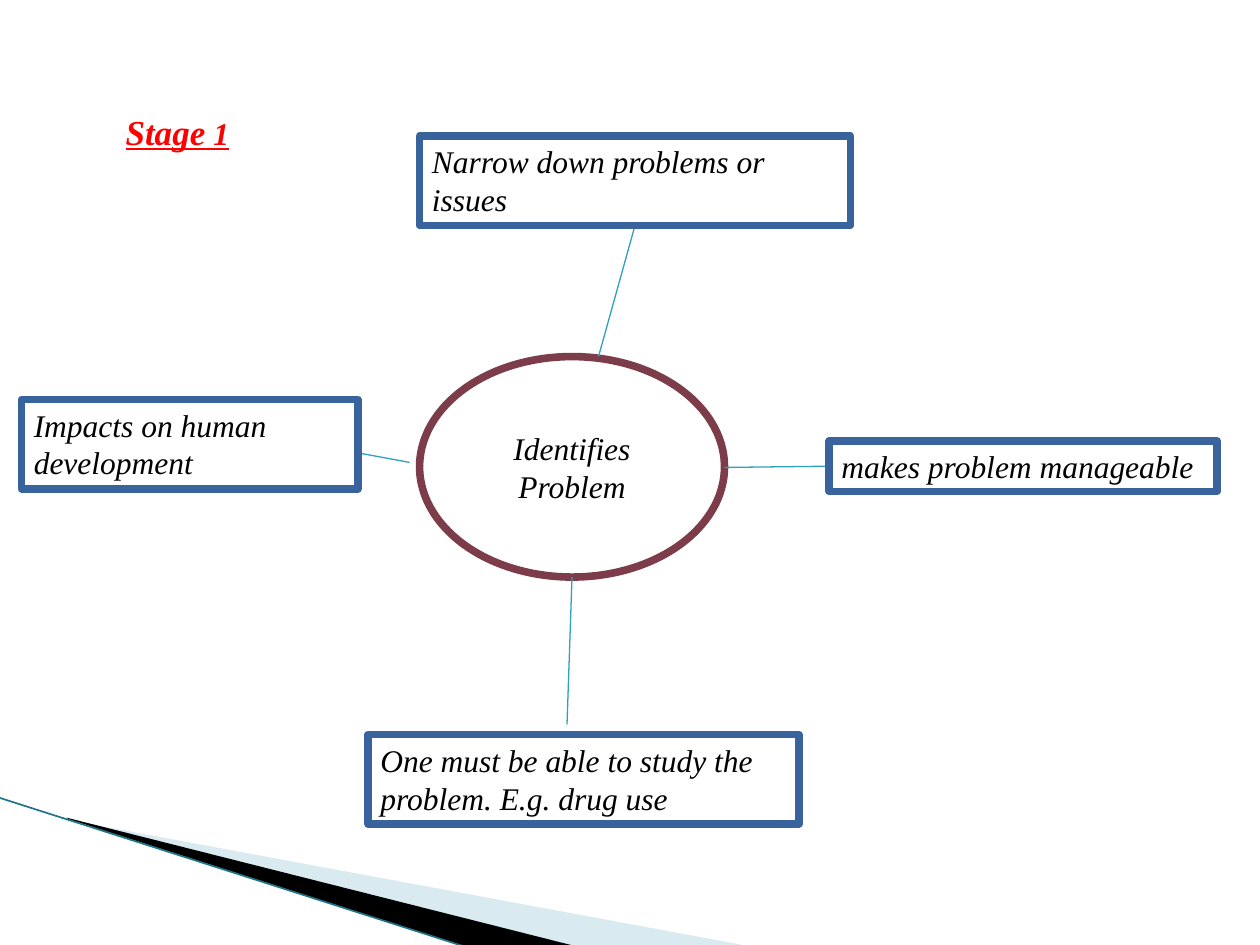
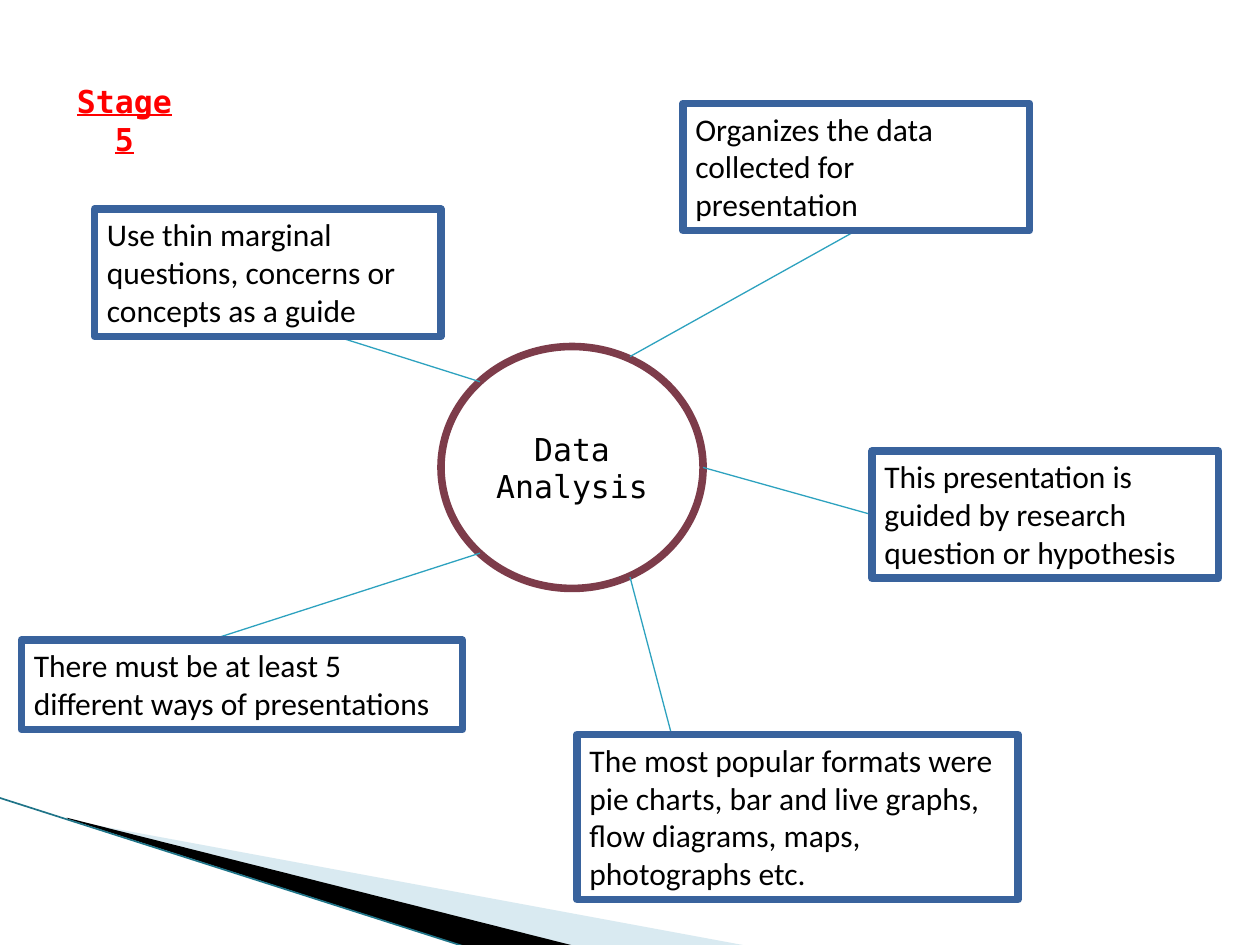
"""Builds two research-stage slides, each a hub with callout boxes around it."""
from dataclasses import dataclass

import lxml.etree
import pptx
import pptx.dml.color
import pptx.enum.shapes
import pptx.enum.text
import pptx.oxml.ns
import pptx.util


@dataclass(frozen=True)
class Theme:
    white: str = "FFFFFF"
    black: str = "000000"
    red: str = "FF0000"
    box_line: str = "39639D"
    hub_line: str = "7D3C4A"
    link: str = "2DA2BF"
    pale_band: str = "A0CBDC"
    band_edge: str = "1F7488"
    body_size: int = 18
    title_size: int = 20
    frame_width: float = 4.33
    link_width: float = 0.75
    edge_width: float = 0.95


THEME = Theme()
PX = 9144
KIND = pptx.enum.shapes.MSO_SHAPE
STRAIGHT = pptx.enum.shapes.MSO_CONNECTOR.STRAIGHT
CENTER = pptx.enum.text.PP_ALIGN.CENTER
LEFT = pptx.enum.text.PP_ALIGN.LEFT
MIDDLE = pptx.enum.text.MSO_ANCHOR.MIDDLE
TOP = pptx.enum.text.MSO_ANCHOR.TOP
rgb = pptx.dml.color.RGBColor.from_string
qn = pptx.oxml.ns.qn

BANDS = [
    ([(55, 651), (595, 751), (456, 751), (55, 650)], THEME.pale_band, 40),
    ([(53, 649), (457, 751), (372, 752), (54, 650)], THEME.black, 100),
]

STAGES = [
    {
        "title": [("Stage", THEME.title_size), (" 1", THEME.body_size)],
        "title_at": (42, 42, 200, 133),
        "title_fill": THEME.white,
        "title_font": "Times New Roman",
        "body_font": "Times New Roman",
        "italic": True,
        "hub": ("Identifies Problem", KIND.OVAL, (333, 283, 242, 175)),
        "callouts": [
            ("One must be able to study the problem. E.g. drug use",
             (292, 583, 342, 71), (454, 458), (450, 575)),
            ("makes problem manageable", (658, 350, 308, 40), (575, 371), 1),
            ("Narrow down problems or issues", (333, 108, 342, 71), (475, 283), 2),
            ("Impacts on human development",
             (17, 317, 267, 71), (325, 367), (233, 350)),
        ],
    },
    {
        "title": [("Stage 5", THEME.body_size)],
        "title_at": (0, 33, 200, 133),
        "title_fill": None,
        "title_font": "DejaVu Sans Mono",
        "body_font": "Calibri",
        "italic": False,
        "hub": ("Data Analysis", KIND.FLOWCHART_CONNECTOR, (350, 275, 208, 192)),
        "callouts": [
            ("Organizes the data collected for presentation",
             (542, 82, 275, 101), (500, 283), 2),
            ("Use thin marginal questions, concerns or concepts as a guide",
             (75, 166, 275, 101), (381, 303), (267, 267)),
            ("This presentation is guided by research question or hypothesis",
             (692, 358, 275, 101), (558, 371), 1),
            ("There must be at least 5 different ways of presentations",
             (17, 508, 350, 71), (381, 439), (167, 508)),
            ("The most popular formats were pie charts, bar and live graphs, "
             "flow diagrams, maps, photographs etc.",
             (458, 583, 350, 131), (500, 458), (533, 583)),
        ],
    },
]


def add_box(page, kind, place, spans, font, color, align, fill, line):
    """Adds a shape holding one paragraph of (text, size) spans."""
    box = page.shapes.add_shape(kind, *[length * PX for length in place])
    box.shadow.inherit = False
    if fill:
        box.fill.solid()
        box.fill.fore_color.rgb = rgb(fill)
    else:
        box.fill.background()
    if line:
        box.line.color.rgb = rgb(line)
        box.line.width = pptx.util.Pt(THEME.frame_width)
    else:
        box.line.fill.background()
    frame = box.text_frame
    frame.word_wrap = True
    frame.vertical_anchor = MIDDLE if align == CENTER else TOP
    para = frame.paragraphs[0]
    para.alignment = align
    for text, size in spans:
        span = para.add_run()
        span.text = text
        span.font.name = font
        span.font.size = pptx.util.Pt(size)
        span.font.color.rgb = rgb(color)
    return box


def add_line(page, start, end, color, width):
    """Adds a straight connector without a shadow."""
    points = [length * PX for length in (*start, *end)]
    line = page.shapes.add_connector(STRAIGHT, *points)
    line.line.color.rgb = rgb(color)
    line.line.width = pptx.util.Pt(width)
    lxml.etree.SubElement(line.element.spPr, qn("a:effectLst"))
    return line


deck = pptx.Presentation()
deck.slide_width = 1000 * PX
deck.slide_height = 750 * PX

for stage in STAGES:
    page = deck.slides.add_slide(deck.slide_layouts[6])
    page.background.fill.solid()
    page.background.fill.fore_color.rgb = rgb(THEME.white)

    for corners, color, opacity in BANDS:
        outline = page.shapes.build_freeform(*corners[0], scale=PX)
        outline.add_line_segments(corners[1:], close=True)
        band = outline.convert_to_shape()
        band.shadow.inherit = False
        band.fill.solid()
        band.fill.fore_color.rgb = rgb(color)
        band.line.fill.background()
        if opacity < 100:
            tint = band.element.spPr.find(".//" + qn("a:srgbClr"))
            lxml.etree.SubElement(tint, qn("a:alpha"), val=str(opacity * 1000))
    add_line(page, (-1, 633), (371, 752), THEME.band_edge, THEME.edge_width)

    hub_text, hub_kind, hub_at = stage["hub"]
    hub_font = stage["title_font"]
    hub = add_box(page, hub_kind, hub_at, [(hub_text, THEME.body_size)], hub_font,
                  THEME.black, CENTER, THEME.white, THEME.hub_line)
    hub.text_frame.paragraphs[0].runs[0].font.italic = stage["italic"]

    for text, place, hub_point, target in stage["callouts"]:
        box = add_box(page, KIND.RECTANGLE, place, [(text, THEME.body_size)],
                      stage["body_font"], THEME.black, LEFT, THEME.white, THEME.box_line)
        box.text_frame.auto_size = pptx.enum.text.MSO_AUTO_SIZE.SHAPE_TO_FIT_TEXT
        box.text_frame.paragraphs[0].runs[0].font.italic = stage["italic"]
        joined = isinstance(target, int)
        link = add_line(page, hub_point, hub_point if joined else target,
                        THEME.link, THEME.link_width)
        if joined:
            link.end_connect(box, target)
        hub.element.addnext(link.element)

    title = add_box(page, KIND.EXPLOSION1, stage["title_at"], stage["title"],
                    stage["title_font"], THEME.red, CENTER, stage["title_fill"], None)
    for span in title.text_frame.paragraphs[0].runs:
        span.font.bold = True
        span.font.italic = stage["italic"]
        span.font.underline = True

deck.save("out.pptx")
